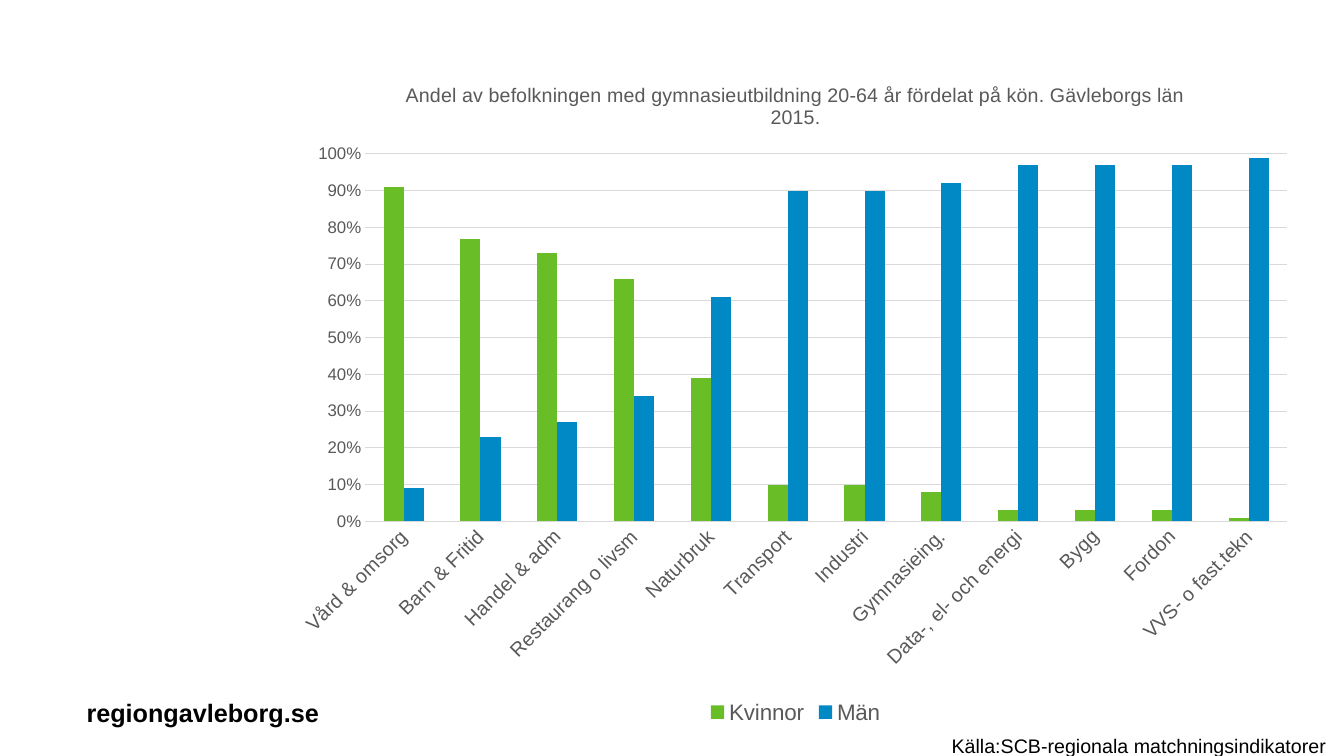
from lxml.etree import SubElement
from pptx import Presentation
from pptx.chart.data import CategoryChartData
from pptx.dml.color import RGBColor
from pptx.enum.chart import XL_CHART_TYPE, XL_LEGEND_POSITION, XL_TICK_MARK
from pptx.enum.text import MSO_AUTO_SIZE
from pptx.oxml.ns import qn
from pptx.util import Inches, Pt

GRAY, RULE = "595959", "D9D9D9"


def style(font, size, color, bold=False):
    font.name, font.size, font.bold = "Arial", Pt(size), bold
    font.color.rgb = RGBColor.from_string(color)


def stroke(line, color):
    line.color.rgb = RGBColor.from_string(color)
    line.width = Pt(0.75)


deck = Presentation()
deck.slide_width, deck.slide_height = Inches(13.33), Inches(7.5)
slide = deck.slides.add_slide(deck.slide_layouts[6])

# Share of women per field of study; men make up the rest
women = {
    "Vård & omsorg": 0.91,
    "Barn & Fritid": 0.77,
    "Handel & adm": 0.73,
    "Restaurang o livsm": 0.66,
    "Naturbruk": 0.39,
    "Transport": 0.1,
    "Industri": 0.1,
    "Gymnasieing.": 0.08,
    "Data-, el- och energi": 0.03,
    "Bygg": 0.03,
    "Fordon": 0.03,
    "VVS- o fast.tekn": 0.01,
}
data = CategoryChartData(number_format="0%")
data.categories = list(women)
data.add_series("Kvinnor", list(women.values()))
data.add_series("Män", [round(1 - share, 2) for share in women.values()])

chart = slide.shapes.add_chart(
    XL_CHART_TYPE.COLUMN_CLUSTERED,
    Inches(2.81), Inches(0.6), Inches(10.16), Inches(6.63), data).chart
style(chart.font, 12, "000000")

chart.has_title = True
title = chart.chart_title.text_frame
title.text = ("Andel av befolkningen med gymnasieutbildning 20-64 år "
              "fördelat på kön. Gävleborgs län 2015.")
style(title.paragraphs[0].font, 14, GRAY)
chart.chart_title.include_in_layout = False

chart.has_legend = True
chart.legend.position = XL_LEGEND_POSITION.BOTTOM
chart.legend.include_in_layout = False
style(chart.legend.font, 16, GRAY)

plot = chart.plots[0]
plot.gap_width, plot.overlap = 182, 0
plot.vary_by_categories = False
for series, color in zip(plot.series, ["69BE28", "0089C4"]):
    series.format.fill.solid()
    series.format.fill.fore_color.rgb = RGBColor.from_string(color)

fields, shares = chart.category_axis, chart.value_axis
for axis, size in [(fields, 14), (shares, 12)]:
    axis.major_tick_mark = axis.minor_tick_mark = XL_TICK_MARK.NONE
    style(axis.tick_labels.font, size, GRAY)
stroke(fields.format.line, RULE)
fields._element.find(qn("c:txPr")).find(qn("a:bodyPr")).set("rot", "-2700000")

shares.minimum_scale, shares.maximum_scale, shares.major_unit = 0, 1, 0.1
shares.tick_labels.number_format = "0%"
shares.tick_labels.number_format_is_linked = False
shares.format.line.fill.background()
stroke(shares.major_gridlines.format.line, RULE)

# Fix the inner plot area as fractions of the chart
area = chart._chartSpace.chart.plotArea
layout = area.find(qn("c:layout"))
if layout is None:
    layout = area.makeelement(qn("c:layout"))
    area.insert(0, layout)
manual = SubElement(layout, qn("c:manualLayout"))
for tag, value in [("layoutTarget", "inner"), ("xMode", "edge"), ("yMode", "edge"),
                   ("x", "0.08"), ("y", "0.14"), ("w", "0.9"), ("h", "0.55")]:
    SubElement(manual, qn("c:" + tag)).set("val", value)

for text, left, top, width, height, size, bold in [
    ("regiongavleborg.se", 0.76, 6.87, 2.62, 0.4, 18, True),
    ("Källa:SCB-regionala matchningsindikatorer", 9.34, 7.23, 3.94, 0.34, 14, False),
]:
    frame = slide.shapes.add_textbox(
        Inches(left), Inches(top), Inches(width), Inches(height)).text_frame
    frame.word_wrap = bold
    frame.auto_size = MSO_AUTO_SIZE.SHAPE_TO_FIT_TEXT
    frame.text = text
    style(frame.paragraphs[0].font, size, "000000", bold)

deck.save("out.pptx")
